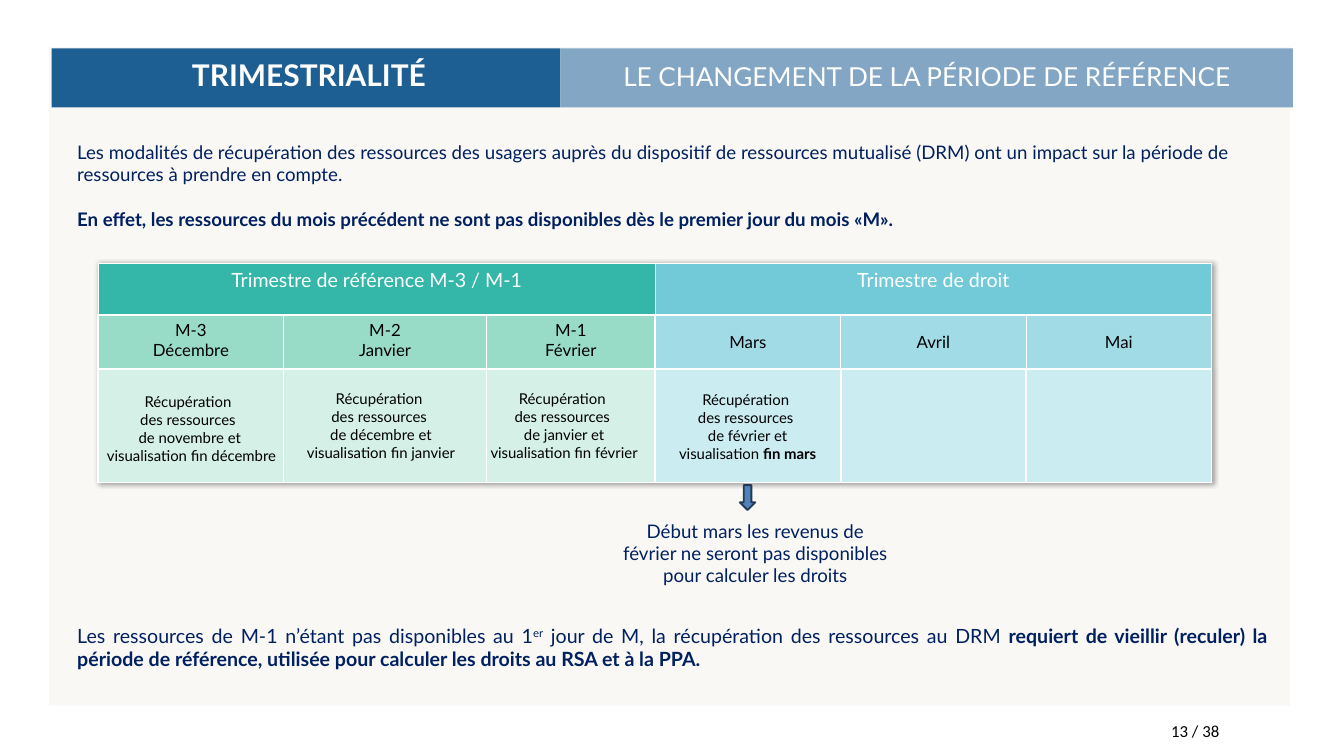
from lxml import etree
from pptx import Presentation
from pptx.dml.color import RGBColor
from pptx.enum.shapes import MSO_SHAPE
from pptx.enum.text import MSO_ANCHOR, MSO_AUTO_SIZE, PP_ALIGN as AL
from pptx.oxml import parse_xml
from pptx.oxml.ns import nsdecls, qn
from pptx.util import Inches, Pt

NAVY, WHITE, BLACK = "002060", "FFFFFF", "000000"


def rgb(value):
    return RGBColor.from_string(value)


def write(tf, paragraphs, size, color, align=AL.LEFT, font="Lato"):
    """Fill a text frame; a paragraph is a list of (text, style) runs, style being "", "bold" or "super"."""
    tf.word_wrap = True
    tf.auto_size = MSO_AUTO_SIZE.NONE
    for i, runs in enumerate(paragraphs):
        p = tf.paragraphs[0] if i == 0 else tf.add_paragraph()
        p.alignment = align
        for text, style in runs:
            r = p.add_run()
            r.text = text
            r.font.color.rgb = rgb(color)
            for name, value in {"size": Pt(size), "name": font, "bold": style == "bold"}.items():
                setattr(r.font, name, value)
            if style == "super":
                r.font._element.set("baseline", "30000")


prs = Presentation()
prs.slide_width, prs.slide_height = Inches(20), Inches(11.25)
s = prs.slides.add_slide(prs.slide_layouts[5])

# Background panel and the two header bands
for x, y, w, h, color in [
    (0.73, 0.7, 18.47, 9.8, "FAF8F5"),
    (0.77, 0.72, 7.57, 0.88, "1D5E93"),
    (8.34, 0.72, 10.9, 0.88, "82A6C3"),
]:
    sp = s.shapes.add_shape(MSO_SHAPE.RECTANGLE, Inches(x), Inches(y), Inches(w), Inches(h))
    sp.shadow.inherit = False
    sp.fill.solid()
    sp.fill.fore_color.rgb = rgb(color)
    sp.line.fill.background()

# Title, brought in front of its band
title = s.shapes.title
title.left, title.top, title.width, title.height = (Inches(v) for v in (0.82, 0.96, 7.56, 0.49))
title.text_frame.vertical_anchor = MSO_ANCHOR.TOP
write(title.text_frame, [[("TRIMESTRIALITÉ", "bold")]], 32, WHITE, AL.CENTER)
title.text_frame.paragraphs[0].line_spacing = Pt(26.6)
s.shapes.element.append(title.element)

# Quarter table
columns = [2.76, 3.02, 2.51, 2.76, 2.76, 2.76]
rows = [0.77, 0.8, 1.69]
months = [["M-3", "Décembre"], ["M-2", "Janvier"], ["M-1", "Février"], ["Mars"], ["Avril"], ["Mai"]]
row_fills = [("34B7A9", "72C9D8"), ("98DBC6", "A1DBE5"), ("D4F0E7", "CBECF1")]

frame = s.shapes.add_table(3, 6, Inches(1.46), Inches(3.92), Inches(sum(columns)), Inches(sum(rows)))
table = frame.table
for column, width in zip(table.columns, columns):
    column.width = Inches(width)
for row, height in zip(table.rows, rows):
    row.height = Inches(height)

for i, fills in enumerate(row_fills):
    for j in range(len(columns)):
        cell = table.cell(i, j)
        cell.margin_left = cell.margin_right = Inches(0.15)
        cell.margin_top = cell.margin_bottom = Inches(0.07)
        thin = i == 0 or (i == 1 and j > 2)
        tcPr = cell._tc.get_or_add_tcPr()
        for side in ("lnL", "lnR", "lnT", "lnB"):
            width = 1 if thin and side != "lnB" else 2.25
            ln = etree.SubElement(tcPr, qn(f"a:{side}"), w=str(Pt(width)))
            fill = etree.SubElement(ln, qn("a:solidFill"))
            etree.SubElement(fill, qn("a:srgbClr"), val=WHITE)
        cell.fill.solid()
        cell.fill.fore_color.rgb = rgb(fills[j // 3])
        if i == 1:
            write(cell.text_frame, [[(line, "")] for line in months[j]], 18, BLACK, AL.CENTER)
            cell.vertical_anchor = MSO_ANCHOR.MIDDLE if j > 2 else MSO_ANCHOR.TOP

for j, heading in [(0, "Trimestre de référence M-3 / M-1"), (3, "Trimestre de droit")]:
    table.cell(0, j).merge(table.cell(0, j + 2))
    write(table.cell(0, j).text_frame, [[(heading, "")]], 21, WHITE, AL.CENTER)

table._tbl.tblPr.insert(0, parse_xml(
    f'<a:effectLst {nsdecls("a")}><a:outerShdw blurRad="50800" dist="19050" dir="2700000">'
    '<a:srgbClr val="000000"><a:alpha val="35000"/></a:srgbClr></a:outerShdw></a:effectLst>'))

# Arrow from March to its remark
arrow = s.shapes.add_shape(MSO_SHAPE.DOWN_ARROW, Inches(11.01), Inches(7.22), Inches(0.23), Inches(0.37))
arrow.shadow.inherit = False
arrow.fill.solid()
arrow.fill.fore_color.rgb = rgb("4F81BD")
arrow.line.color.rgb = rgb("233953")
arrow.line.width = Pt(2)

# Texts: place, paragraphs, size, colour, alignment, font
retrieval = [[("Récupération ", "")], [("des ressources ", "")]]
intro = [
    [("Les modalités de récupération des ressources des usagers auprès du dispositif de ressources "
      "mutualisé (DRM) ont un impact sur la période de ressources à prendre en compte.", "")],
    [("En effet, les ressources du mois précédent ne sont pas disponibles dès le premier jour "
      "du mois «M».", "bold")],
]
conclusion = [[
    ("Les ressources de M-1 n’étant pas disponibles au 1", ""),
    ("er", "super"),
    (" jour de M, la récupération des ressources au DRM ", ""),
    ("requiert de vieillir (reculer) la période de référence, utilisée pour calculer les droits "
     "au RSA et à la PPA.", "bold"),
]]
remark = [[("Début mars les revenus de février ne seront pas disponibles pour calculer les droits", "")]]
november = retrieval + [[("de novembre et", "")], [(" visualisation fin décembre", "")]]
december = retrieval + [[("de décembre et visualisation fin janvier", "")]]
january = retrieval + [[("de janvier et visualisation fin février", "")]]
february = retrieval + [[("de février et visualisation ", ""), ("fin mars", "bold")]]

for place, paragraphs, size, color, align, font in [
    ((8.34, 0.85, 10.9, 0.57), [[("LE CHANGEMENT DE LA PÉRIODE DE RÉFÉRENCE", "")]], 28, WHITE, AL.CENTER, "Lato"),
    ((1.05, 2.04, 17.46, 1.45), intro, 20, NAVY, AL.LEFT, "Lato"),
    ((1.32, 5.8, 3.01, 1.18), november, 16, BLACK, AL.CENTER, "Lato"),
    ((4.31, 5.75, 2.72, 1.18), december, 16, BLACK, AL.CENTER, "Lato"),
    ((7.2, 5.75, 2.39, 1.18), january, 16, BLACK, AL.CENTER, "Lato"),
    ((9.87, 5.77, 2.51, 1.18), february, 16, BLACK, AL.CENTER, "Lato"),
    ((9.11, 7.68, 4.26, 1.11), remark, 20, NAVY, AL.CENTER, "Lato"),
    ((1.05, 9.23, 17.91, 0.81), conclusion, 21, NAVY, AL.JUSTIFY, "Lato"),
    ((17.33, 10.68, 1.19, 0.42), [[("13 / 38", "")]], 18, BLACK, AL.LEFT, "Calibri"),
]:
    tf = s.shapes.add_textbox(*(Inches(v) for v in place)).text_frame
    write(tf, paragraphs, size, color, align, font)
    if paragraphs is intro:
        tf.paragraphs[1].space_before = Pt(24)

prs.save("out.pptx")
